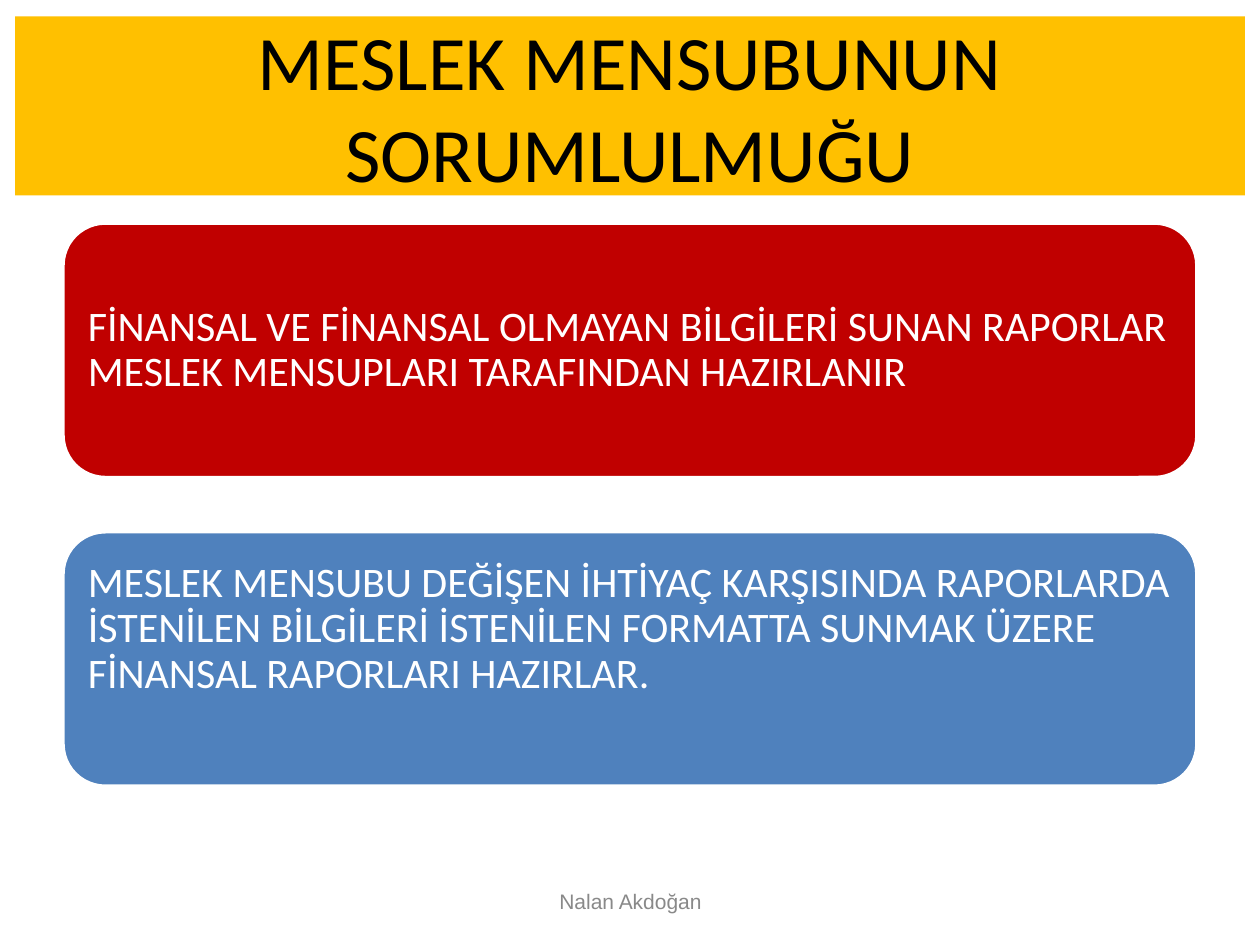
from pptx import Presentation
from pptx.dml.color import RGBColor
from pptx.enum.shapes import MSO_SHAPE as Shape
from pptx.enum.text import MSO_ANCHOR as Anchor, PP_ALIGN as Align
from pptx.util import Inches, Pt

WIDTH, HEIGHT = 10, 7.5
CARD_HEIGHT, CARD_PITCH = 2.02, 2.45
CARDS = [
    # text, fill, bottom inset (a larger one lifts the text)
    ("FİNANSAL VE FİNANSAL OLMAYAN BİLGİLERİ SUNAN RAPORLAR "
     "MESLEK MENSUPLARI TARAFINDAN HAZIRLANIR", "C00000", 0.1),
    ("MESLEK MENSUBU DEĞİŞEN İHTİYAÇ KARŞISINDA RAPORLARDA İSTENİLEN "
     "BİLGİLERİ İSTENİLEN FORMATTA SUNMAK ÜZERE FİNANSAL RAPORLARI HAZIRLAR.",
     "4F81BD", 0.57),
]


def color(hex_code):
    return RGBColor.from_string(hex_code)


def add_panel(slide, box, kind, fill):
    shape = slide.shapes.add_shape(kind, *map(Inches, box))
    shape.shadow.inherit = False
    shape.fill.solid()
    shape.fill.fore_color.rgb = color(fill)
    shape.line.fill.background()
    return shape


def write(shape, text, size, font_name, font_color, align):
    frame = shape.text_frame
    frame.text = text
    frame.word_wrap = True
    frame.vertical_anchor = Anchor.MIDDLE
    paragraph = frame.paragraphs[0]
    paragraph.alignment = align
    font = paragraph.runs[0].font
    font.size, font.name = Pt(size), font_name
    font.color.rgb = color(font_color)
    return paragraph


def add_title(slide, box):
    banner = add_panel(slide, box, Shape.RECTANGLE, "FFC000")
    write(banner, "MESLEK MENSUBUNUN SORUMLULMUĞU", 44, "Calibri", "000000", Align.CENTER)


def add_card(slide, box, text, fill, bottom_inset):
    card = add_panel(slide, box, Shape.ROUNDED_RECTANGLE, fill)
    card.line.color.rgb = color("FFFFFF")
    card.line.width = Pt(2)
    paragraph = write(card, text, 24, "Calibri", "FFFFFF", Align.LEFT)
    paragraph.line_spacing = 0.9
    frame = card.text_frame
    frame.margin_left = frame.margin_right = frame.margin_top = Inches(0.1)
    frame.margin_bottom = Inches(bottom_inset)


def add_cards(slide, left, top, width):
    for row, card in enumerate(CARDS):
        add_card(slide, (left, top + row * CARD_PITCH, width, CARD_HEIGHT), *card)


def add_footer(slide, box):
    footer = slide.shapes.add_textbox(*map(Inches, box))
    write(footer, "Nalan Akdoğan", 12, "Arial", "898989", Align.CENTER)


def main():
    presentation = Presentation()
    presentation.slide_width, presentation.slide_height = Inches(WIDTH), Inches(HEIGHT)
    slide = presentation.slides.add_slide(presentation.slide_layouts[6])
    add_title(slide, (0.12, 0.13, WIDTH - 0.24, 1.42))
    add_cards(slide, 0.05 * WIDTH, 1.77, 0.9 * WIDTH)
    add_footer(slide, (3.42, 6.95, 3.17, 0.4))
    presentation.save("out.pptx")


if __name__ == "__main__":
    main()
